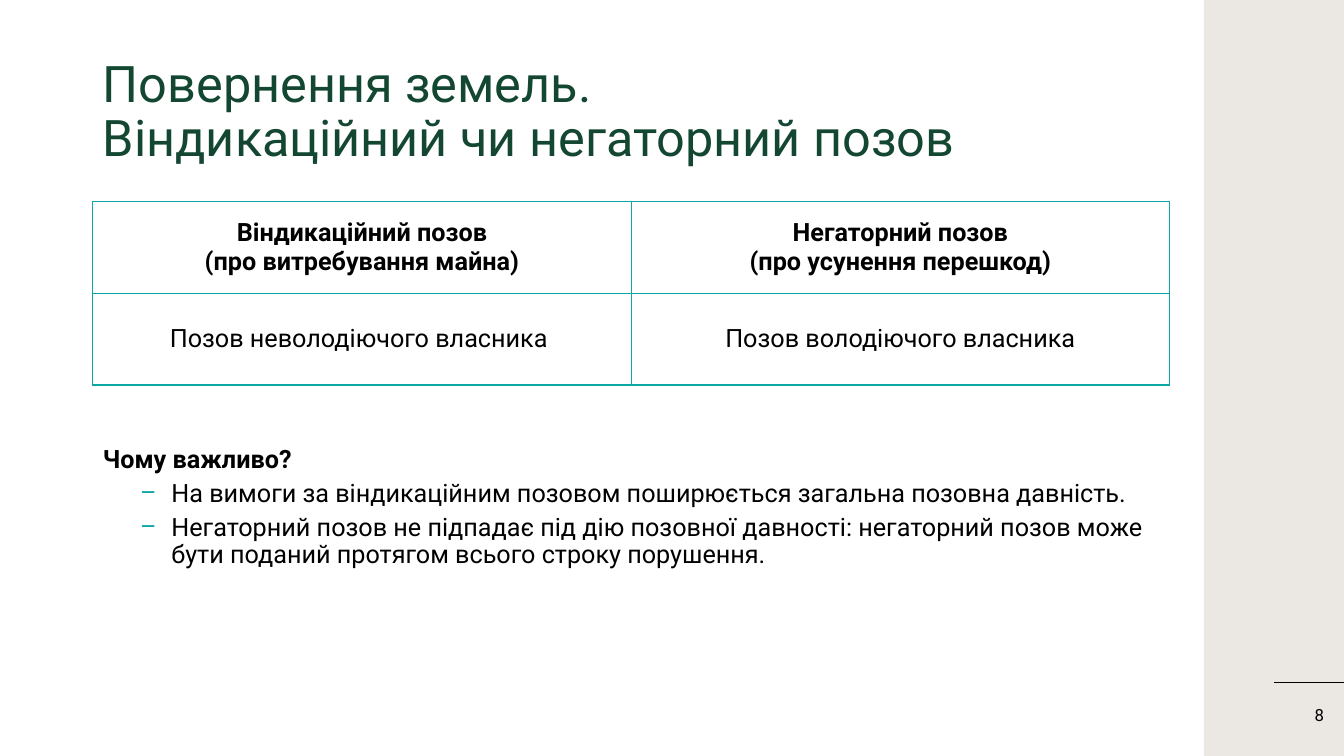
"""Build the slide on vindication and negatory claims for returning land."""
from lxml import etree
from pptx import Presentation
from pptx.dml.color import RGBColor
from pptx.enum.shapes import MSO_CONNECTOR as Connector, MSO_SHAPE as Shape
from pptx.enum.text import MSO_ANCHOR as Anchor, MSO_AUTO_SIZE as AutoSize, PP_ALIGN as Align
from pptx.oxml.ns import qn
from pptx.util import Inches, Pt

TITLE = "Повернення земель.\vВіндикаційний чи негаторний позов"
CLAIMS = [
    ["Віндикаційний позов\n(про витребування майна)", "Негаторний позов\n(про усунення перешкод)"],
    ["Позов неволодіючого власника ", "Позов володіючого власника"],
]
QUESTION = "Чому важливо?"
REASONS = [
    "На вимоги за віндикаційним позовом поширюється загальна позовна давність.",
    "Негаторний позов не підпадає під дію позовної давності: негаторний позов може "
    "бути поданий протягом всього строку порушення.",
]
PAGE_NUMBER = "8"

FONT = "Roboto"
GREEN, TEAL, SAND, BLACK = "134732", "0AA7A5", "EBE8E3", "000000"
WIDTH, HEIGHT = 13.33, 7.5
LEFT, CONTENT_WIDTH = 0.92, 10.68
BAND_LEFT = 11.94
RULE_LEFT, RULE_TOP = 12.64, 6.77


def color(value):
    return RGBColor.from_string(value)


def place(shape, left, top, width, height):
    shape.left, shape.top = Inches(left), Inches(top)
    shape.width, shape.height = Inches(width), Inches(height)


def style(para, size, value=BLACK, bold=False, align=Align.LEFT):
    para.alignment = align
    for span in para.runs:
        span.font.name, span.font.size, span.font.bold = FONT, Pt(size), bold
        span.font.color.rgb = color(value)


def add_solid(parent, value):
    fill = etree.SubElement(parent, qn("a:solidFill"))
    etree.SubElement(fill, qn("a:srgbClr"), val=value)


def set_bullet(para, char=None):
    props = para._p.get_or_add_pPr()
    indent = Inches(0.31) if char else 0
    props.set("marL", str(Inches(0.68) if char else 0))
    props.set("indent", str(-indent))
    if char:
        etree.SubElement(props, qn("a:buClr")).append(etree.Element(qn("a:srgbClr"), val=TEAL))
        etree.SubElement(props, qn("a:buFont"), typeface=FONT)
        etree.SubElement(props, qn("a:buChar"), char=char)
    else:
        etree.SubElement(props, qn("a:buNone"))


def set_borders(cell):
    props = cell._tc.get_or_add_tcPr()
    for index, side in enumerate(("lnL", "lnR", "lnT", "lnB")):
        border = etree.Element(qn(f"a:{side}"), w=str(Pt(1)))
        add_solid(border, TEAL)
        props.insert(index, border)


def add_side_band(page):
    band = page.shapes.add_shape(
        Shape.RECTANGLE, Inches(BAND_LEFT), 0, Inches(WIDTH - BAND_LEFT), Inches(HEIGHT))
    band.shadow.inherit = False
    band.fill.solid()
    band.fill.fore_color.rgb = color(SAND)
    band.line.fill.background()

    box = page.shapes.add_textbox(Inches(12.05), Inches(RULE_TOP), Inches(1.18), Inches(0.65))
    frame = box.text_frame
    frame.word_wrap, frame.vertical_anchor = True, Anchor.MIDDLE
    frame.text = PAGE_NUMBER
    style(frame.paragraphs[0], 12, align=Align.RIGHT)

    rule = page.shapes.add_connector(
        Connector.STRAIGHT, Inches(RULE_LEFT), Inches(RULE_TOP), Inches(WIDTH), Inches(RULE_TOP))
    rule.line.color.rgb, rule.line.width = color(BLACK), Pt(0.5)
    etree.SubElement(rule._element.spPr, qn("a:effectLst"))


def fill_title(title):
    place(title, LEFT, 0.4, CONTENT_WIDTH, 1.45)
    frame = title.text_frame
    frame.text = TITLE
    frame.auto_size, frame.vertical_anchor = AutoSize.NONE, Anchor.MIDDLE
    frame.paragraphs[0].line_spacing = 0.9
    style(frame.paragraphs[0], 36, GREEN)


def add_claims_table(page):
    table = page.shapes.add_table(
        len(CLAIMS), len(CLAIMS[0]),
        Inches(LEFT), Inches(2), Inches(CONTENT_WIDTH), Inches(1.82)).table
    table.horz_banding = False
    for row, texts in enumerate(CLAIMS):
        for column, text in enumerate(texts):
            cell = table.cell(row, column)
            cell.text = text
            cell.fill.background()
            cell.vertical_anchor = Anchor.MIDDLE
            cell.margin_left = cell.margin_right = Inches(0.09)
            cell.margin_top = cell.margin_bottom = 0
            set_borders(cell)
            for para in cell.text_frame.paragraphs:
                style(para, 18, bold=row == 0, align=Align.CENTER)


def fill_reasons(body):
    place(body, LEFT, 4.35, CONTENT_WIDTH, 1.36)
    frame = body.text_frame
    frame.text = "\n".join([QUESTION] + REASONS)
    frame.auto_size = AutoSize.NONE
    question, *reasons = frame.paragraphs
    set_bullet(question)
    question.space_before = Pt(0)
    style(question, 18, bold=True)
    for reason in reasons:
        set_bullet(reason, "–")
        reason.line_spacing, reason.space_before = 0.9, Pt(5)
        style(reason, 18)


def main():
    deck = Presentation()
    deck.slide_width, deck.slide_height = Inches(WIDTH), Inches(HEIGHT)
    page = deck.slides.add_slide(deck.slide_layouts[1])
    add_side_band(page)
    fill_title(page.shapes.title)
    add_claims_table(page)
    fill_reasons(page.placeholders[1])
    deck.save("out.pptx")


if __name__ == "__main__":
    main()
